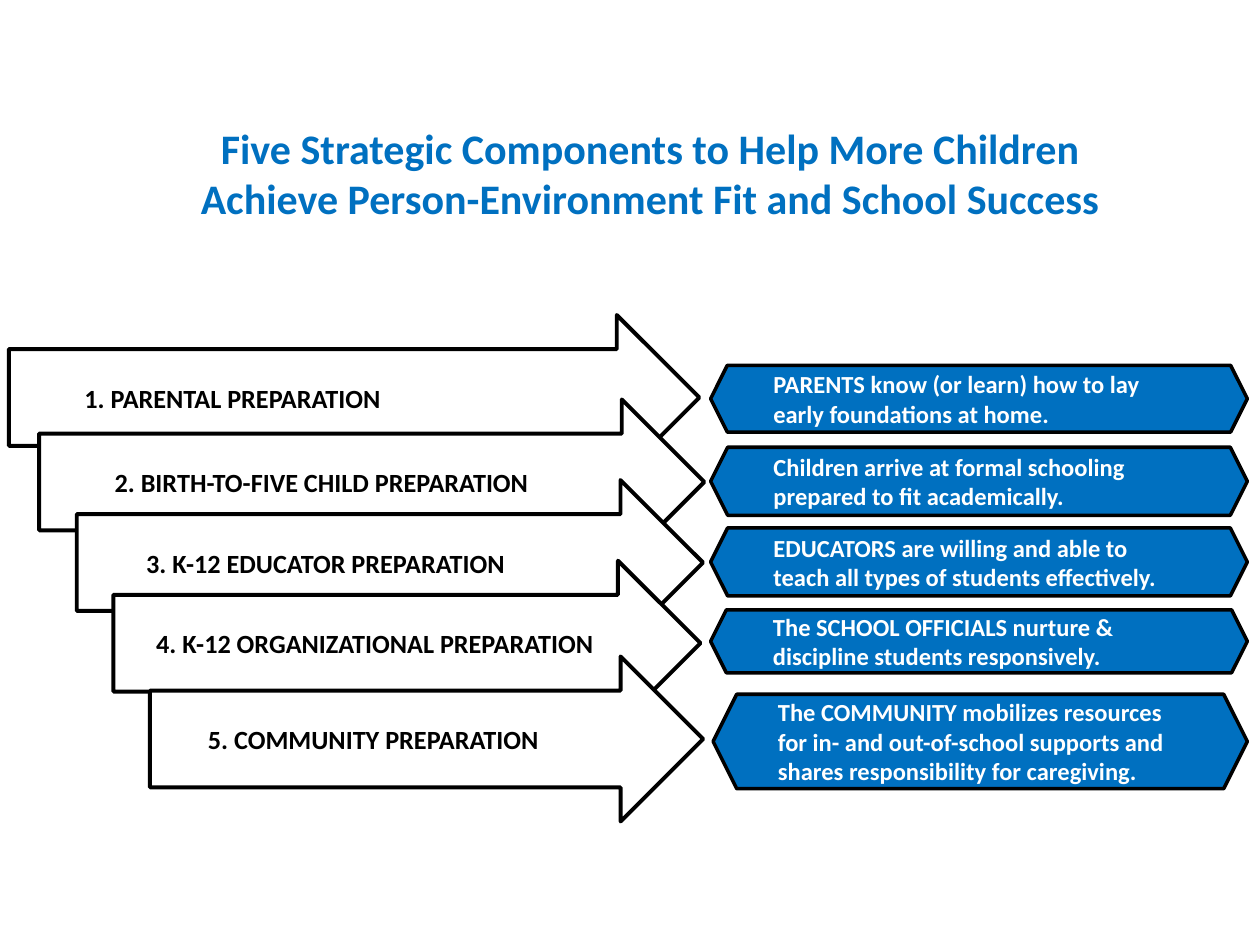
import pptx
import pptx.util
import pptx.dml.color
import pptx.enum.shapes
import pptx.enum.text

Inches = pptx.util.Inches
Pt = pptx.util.Pt
RGBColor = pptx.dml.color.RGBColor
MSO_SHAPE = pptx.enum.shapes.MSO_SHAPE
PP_ALIGN = pptx.enum.text.PP_ALIGN
MSO_ANCHOR = pptx.enum.text.MSO_ANCHOR

BLUE = RGBColor(0x00, 0x70, 0xC0)
WHITE = RGBColor(0xFF, 0xFF, 0xFF)
BLACK = RGBColor(0x00, 0x00, 0x00)

ARROW_HEIGHT = 1.31

# label, left, top, right edge, text indent
ARROWS = [
    ("1. PARENTAL PREPARATION", 0.07, 2.5, 5.55, 0.5),
    ("2. BIRTH-TO-FIVE CHILD PREPARATION", 0.31, 3.17, 5.59, 0.5),
    ("3. K-12 EDUCATOR PREPARATION", 0.61, 3.81, 5.58, 0.45),
    ("4. K-12 ORGANIZATIONAL PREPARATION", 0.9, 4.45, 5.56, 0.24),
    ("5. COMMUNITY PREPARATION", 1.19, 5.21, 5.58, 0.36),
]

# outcome, left, top, width, height
OUTCOMES = [
    ("PARENTS know (or learn) how to lay early foundations at home.",
     5.64, 2.9, 4.26, 0.53),
    ("Children arrive at formal schooling prepared to fit academically.",
     5.64, 3.55, 4.26, 0.54),
    ("EDUCATORS are willing and able to teach all types of students effectively.",
     5.64, 4.19, 4.26, 0.54),
    ("The SCHOOL OFFICIALS nurture & discipline students responsively.",
     5.64, 4.84, 4.26, 0.5),
    ("The COMMUNITY mobilizes resources for in- and out-of-school supports "
     "and shares responsibility for caregiving.",
     5.66, 5.51, 4.24, 0.75),
]


def format_text(frame, size, color, align):
    for para in frame.paragraphs:
        para.alignment = align
        for span in para.runs:
            span.font.name = "Calibri"
            span.font.size = Pt(size)
            span.font.bold = True
            span.font.color.rgb = color


def add_outlined_shape(page, kind, bounds, fill, line_width, text, size, color):
    shape = page.shapes.add_shape(kind, *[Inches(value) for value in bounds])
    shape.shadow.inherit = False
    shape.fill.solid()
    shape.fill.fore_color.rgb = fill
    shape.line.color.rgb = BLACK
    shape.line.width = Pt(line_width)
    frame = shape.text_frame
    frame.text = text
    frame.word_wrap = True
    frame.vertical_anchor = MSO_ANCHOR.MIDDLE
    format_text(frame, size, color, PP_ALIGN.LEFT)
    return shape


deck = pptx.Presentation()
deck.slide_width = Inches(10)
deck.slide_height = Inches(7.5)
page = deck.slides.add_slide(deck.slide_layouts[5])

title = page.shapes.title
title.left, title.top = Inches(0.9), Inches(0.92)
title.width, title.height = Inches(8.52), Inches(0.91)
title.text_frame.text = (
    "Five Strategic Components to Help More Children\n"
    "Achieve Person-Environment Fit and School Success"
)
title.text_frame.word_wrap = True
title.text_frame.auto_size = pptx.enum.text.MSO_AUTO_SIZE.NONE
title.text_frame.vertical_anchor = MSO_ANCHOR.TOP
format_text(title.text_frame, 24, BLUE, PP_ALIGN.CENTER)

for label, left, top, right, indent in ARROWS:
    arrow = add_outlined_shape(
        page, MSO_SHAPE.RIGHT_ARROW, (left, top, right - left, ARROW_HEIGHT),
        WHITE, 2.25, label, 15, BLACK)
    arrow.adjustments[0] = 0.586
    arrow.adjustments[1] = 0.5
    arrow.text_frame.margin_left = Inches(0.1 + indent)

for outcome, *bounds in OUTCOMES:
    add_outlined_shape(
        page, MSO_SHAPE.HEXAGON, bounds, BLUE, 2, outcome, 14, WHITE)

deck.save("out.pptx")
